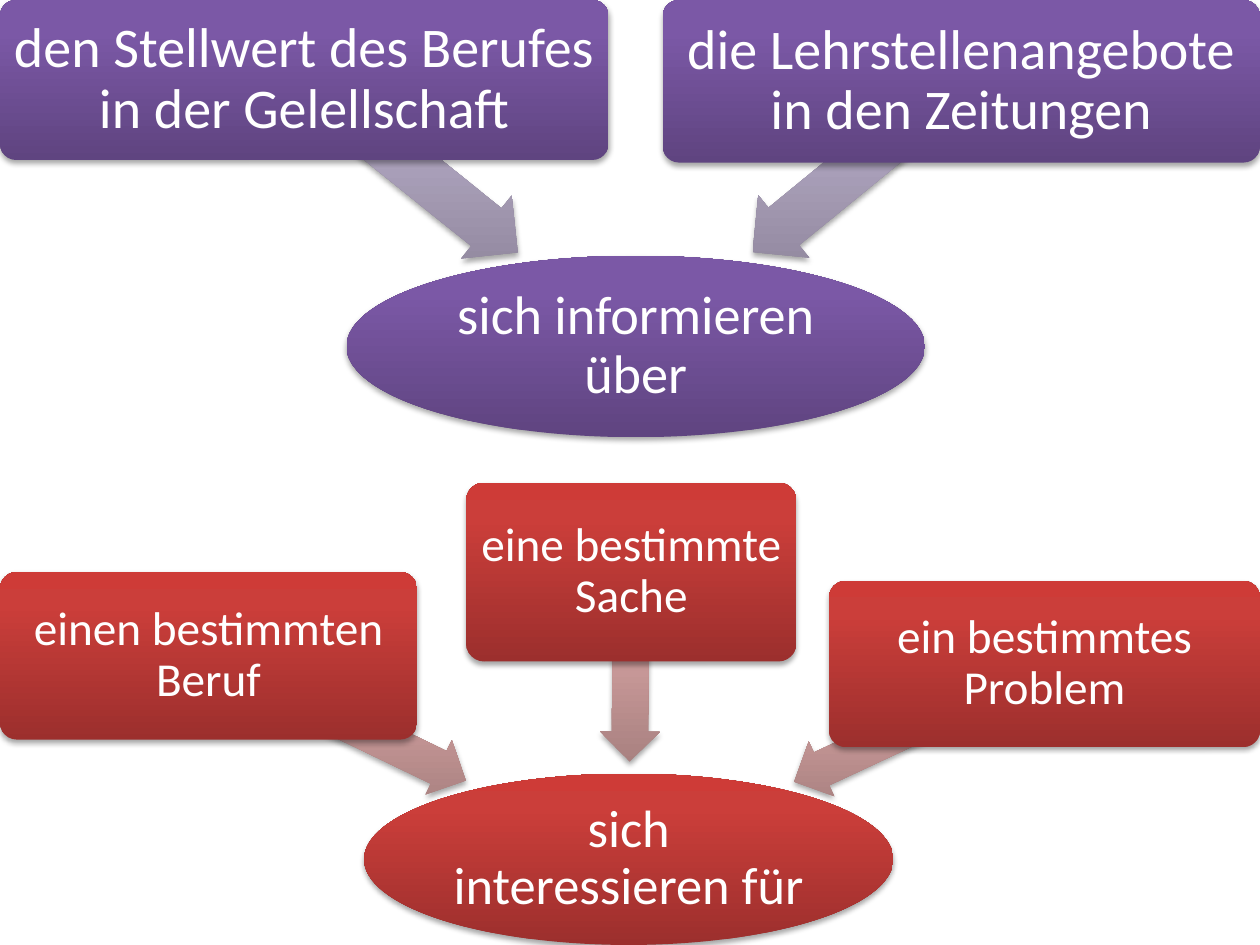
from lxml.etree import fromstring
from pptx import Presentation
from pptx.dml.color import RGBColor as RGB
from pptx.enum.shapes import MSO_SHAPE as SHAPE
from pptx.enum.text import MSO_ANCHOR as ANCHOR, PP_ALIGN as ALIGN
from pptx.util import Pt

PX = 9144
NS = 'xmlns:a="http://schemas.openxmlformats.org/drawingml/2006/main"'
COLORS = {
    "purple": ("5F4480", "7B58A6", "7C57A8"),
    "purple_arrow": ("8F869C", "BAAFCB", "BAAFCC"),
    "red": ("9C2F2D", "CB3E3A", "CE3B37"),
    "red_arrow": ("A98180", "DBA7A7", "DDA7A6"),
    "text": "FFFFFF",
    "shadow": "000000",
}


def style_shape(sp, color):
    """Give a shape an upward three-stop gradient, a soft shadow and no line."""
    stops = "".join(
        f'<a:gs pos="{pos}"><a:srgbClr val="{rgb}"/></a:gs>'
        for pos, rgb in zip((0, 80000, 100000), COLORS[color])
    )
    spPr = sp._element.spPr
    spPr.append(fromstring(
        f'<a:gradFill {NS} rotWithShape="0"><a:gsLst>{stops}</a:gsLst>'
        '<a:lin ang="16200000" scaled="0"/></a:gradFill>'))
    spPr.append(fromstring(
        f'<a:effectLst {NS}><a:outerShdw blurRad="40000" dist="23000" dir="5400000" '
        f'rotWithShape="0"><a:srgbClr val="{COLORS["shadow"]}"><a:alpha val="35000"/>'
        '</a:srgbClr></a:outerShdw></a:effectLst>'))
    sp.line.fill.background()


def add_part(s, kind, origin, rect, color, adjustments=()):
    """Add one styled shape at a place relative to the origin."""
    x, y, w, h = rect
    sp = s.shapes.add_shape(
        kind, *(v * PX for v in (origin[0] + x, origin[1] + y, w, h)))
    for i, value in enumerate(adjustments):
        sp.adjustments[i] = value
    style_shape(sp, color)
    return sp


def set_text(sp, text, size, inset):
    """Write centred white text into a shape."""
    tf = sp.text_frame
    frame = dict.fromkeys(
        ("margin_left", "margin_top", "margin_right", "margin_bottom"), inset * PX)
    frame.update(word_wrap=True, vertical_anchor=ANCHOR.MIDDLE)
    for name, value in frame.items():
        setattr(tf, name, value)
    p = tf.paragraphs[0]
    p.alignment, p.line_spacing = ALIGN.CENTER, 0.9
    r = p.add_run()
    r.text = text
    for name, value in {"name": "Calibri", "size": Pt(size)}.items():
        setattr(r.font, name, value)
    r.font.color.rgb = RGB.from_string(COLORS["text"])


def add_verb_map(s, box, color, verb, objects, size, inset):
    """Draw a verb ellipse with arrows leading to it from its object boxes."""
    text, rect, verb_size = verb
    sp = add_part(s, SHAPE.OVAL, box, rect, color)
    set_text(sp, text, verb_size, 2)
    for text, rect, arrow_rect, angle in objects:
        arrow = add_part(
            s, SHAPE.LEFT_ARROW, box, arrow_rect, f"{color}_arrow", (0.6, 0.5))
        arrow.rotation = angle
        sp = add_part(s, SHAPE.ROUNDED_RECTANGLE, box, rect, color, (0.1,))
        set_text(sp, text, size, inset)


def main():
    """Build the slide with its two verb maps."""
    prs = Presentation()
    prs.slide_width, prs.slide_height = 1000 * PX, 750 * PX
    s = prs.slides.add_slide(prs.slide_layouts[6])
    add_verb_map(
        s, (0, 0), "purple", ("sich informieren über", (275, 203, 459, 144), 31),
        [
            ("den Stellwert des Berufes in der Gelellschaft",
             (0, 0, 483, 127), (217, 100, 218, 64), 218.8),
            ("die Lehrstellenangebote in den Zeitungen",
             (526, 0, 474, 129), (573, 100, 215, 64), 320.7),
        ], 32, 7)
    add_verb_map(
        s, (0, 383), "red", ("sich interessieren für", (289, 231, 420, 136), 30),
        [
            ("einen bestimmten Beruf",
             (0, 71, 331, 133), (154, 163, 227, 48), 205.8),
            ("eine bestimmte Sache",
             (370, 0, 262, 142), (425, 122, 151, 48), 270.6),
            ("ein bestimmtes Problem",
             (658, 78, 342, 132), (620, 167, 219, 48), 334.9),
        ], 27, 6)
    prs.save("out.pptx")


if __name__ == "__main__":
    main()
